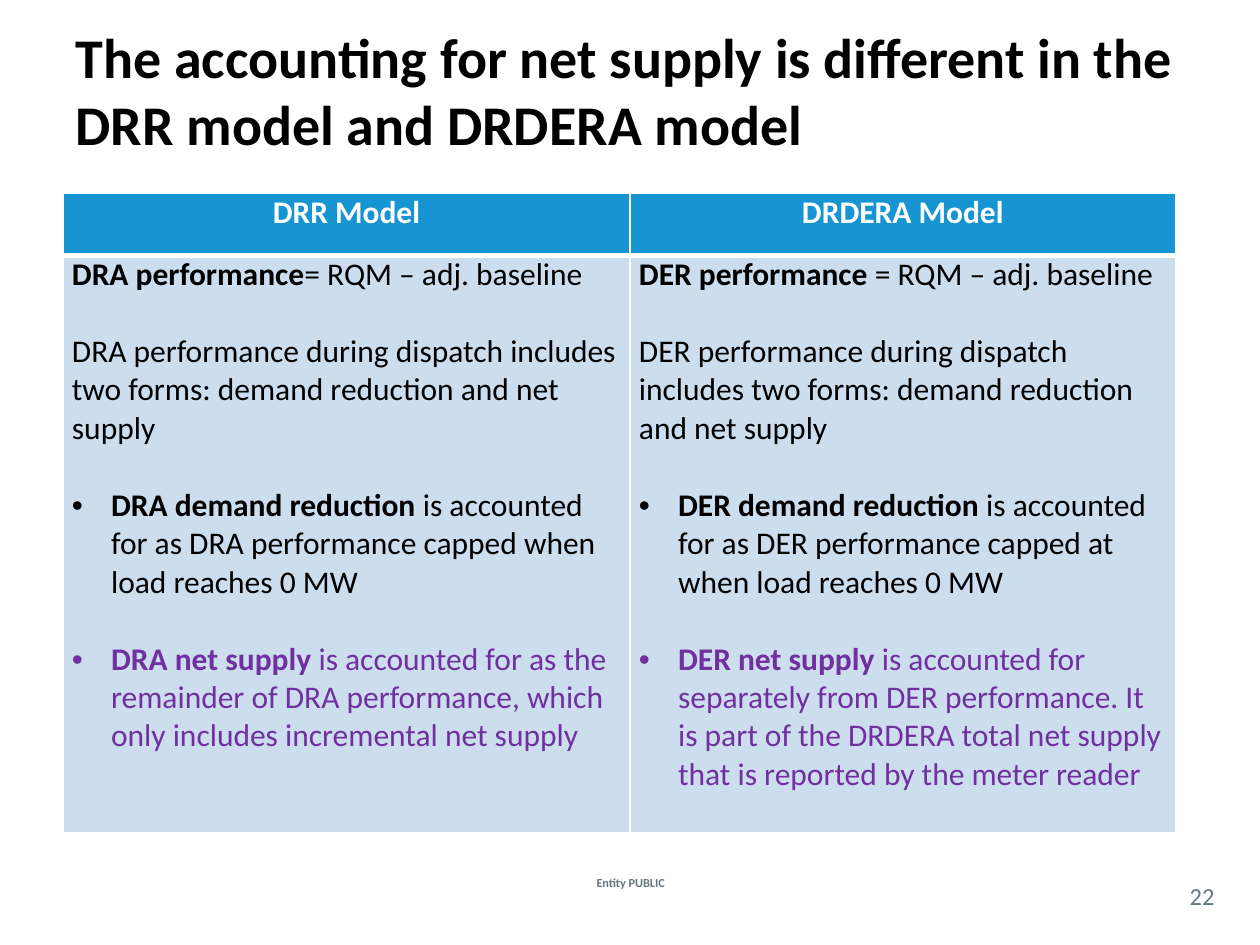
from lxml.etree import SubElement
from pptx import Presentation
from pptx.dml.color import RGBColor
from pptx.enum.text import MSO_ANCHOR, MSO_AUTO_SIZE, PP_ALIGN
from pptx.oxml import parse_xml
from pptx.oxml.ns import nsdecls, qn
from pptx.util import Cm, Pt


def color(code):
    return RGBColor.from_string(code)


def write(para, text, size, code, bold=False):
    run = para.add_run()
    run.text = text
    style = {"name": "Calibri", "size": Pt(size), "bold": bold}
    for key, value in style.items():
        setattr(run.font, key, value)
    run.font.color.rgb = color(code)


deck = Presentation()
deck.slide_width, deck.slide_height = Cm(25.4), Cm(19.05)
slide = deck.slides.add_slide(deck.slide_layouts[5])

title = slide.shapes.title
place = {"left": Cm(1.27), "top": Cm(0.22), "width": Cm(22.86), "height": Cm(3.18)}
for key, value in place.items():
    setattr(title, key, value)
frame = title.text_frame
frame.auto_size = MSO_AUTO_SIZE.NONE
frame.vertical_anchor = MSO_ANCHOR.MIDDLE
frame.paragraphs[0].alignment = PP_ALIGN.LEFT
write(frame.paragraphs[0],
      "The accounting for net supply is different in the DRR model and DRDERA model",
      32, "000000", True)

labels = [
    ("Entity PUBLIC", 10.85, 17.15, 3.73, 1.27, 7, True),
    ("22", 23.7, 17.68, 1.07, 0.74, 14, False),
]
for text, left, top, width, height, size, bold in labels:
    box = slide.shapes.add_textbox(Cm(left), Cm(top), Cm(width), Cm(height))
    frame = box.text_frame
    look = {"word_wrap": True, "vertical_anchor": MSO_ANCHOR.MIDDLE,
            "margin_left": 0, "margin_right": 0, "margin_top": 0, "margin_bottom": 0}
    for key, value in look.items():
        setattr(frame, key, value)
    frame.paragraphs[0].alignment = PP_ALIGN.CENTER
    write(frame.paragraphs[0], text, size, "62777F", bold)

columns = [
    ("DRR Model", 11.43, "DRA", "DRA performance", "= RQM – adj. baseline",
     "is accounted for as DRA performance capped when load reaches 0 MW",
     "is accounted for as the remainder of DRA performance, "
     "which only includes incremental net supply"),
    ("DRDERA Model", 11, "DER", "DER performance ", "= RQM – adj. baseline",
     "is accounted for as DER performance capped at when load reaches 0 MW",
     "is accounted for separately from DER performance. It is part of the "
     "DRDERA total net supply that is reported by the meter reader"),
]
grid = slide.shapes.add_table(2, 2, Cm(1.27), Cm(3.9), Cm(22.43), Cm(12.88)).table
grid.rows[0].height, grid.rows[1].height = Cm(1.25), Cm(11.63)

for col, (head, width, unit, lead, rule, cut, net) in enumerate(columns):
    grid.columns[col].width = Cm(width)
    top, body = grid.cell(0, col), grid.cell(1, col)
    for cell, fill, upper, lower in [(top, "1795D2", 1, 3), (body, "CCDDEE", 3, 1)]:
        edges = {"margin_left": Cm(0.18), "margin_right": Cm(0.18),
                 "margin_top": 0, "margin_bottom": 0}
        for key, value in edges.items():
            setattr(cell, key, value)
        cell.fill.solid()
        cell.fill.fore_color.rgb = color(fill)
        props = cell._tc.get_or_add_tcPr()
        sides = {"lnL": 1, "lnR": 1, "lnT": upper, "lnB": lower}
        for spot, (side, weight) in enumerate(sides.items()):
            props.insert(spot, parse_xml(
                f'<a:{side} {nsdecls("a")} w="{Pt(weight)}"><a:solidFill>'
                f'<a:srgbClr val="FFFFFF"/></a:solidFill></a:{side}>'))

    para = top.text_frame.paragraphs[0]
    para.alignment = PP_ALIGN.CENTER
    write(para, head, 18, "FFFFFF", True)

    forms = (f"{unit} performance during dispatch includes two forms: "
             "demand reduction and net supply")
    parts = [
        (lead, rule, "000000", False),
        ("", forms, "000000", False),
        (f"{unit} demand reduction ", cut, "000000", True),
        (f"{unit} net supply ", net, "7030A0", True),
    ]
    for row, (strong, plain, code, bullet) in enumerate(parts):
        frame = body.text_frame
        para = frame.add_paragraph() if row else frame.paragraphs[0]
        if row:
            para.space_before = Pt(22)
        if bullet:
            props = para._p.get_or_add_pPr()
            props.set("marL", str(Cm(0.79)))
            props.set("indent", str(-Cm(0.79)))
            SubElement(props, qn("a:buFont"), typeface="Arial")
            SubElement(props, qn("a:buChar"), char="•")
        if strong:
            write(para, strong, 18, code, True)
        write(para, plain, 18, code)

deck.save("out.pptx")
